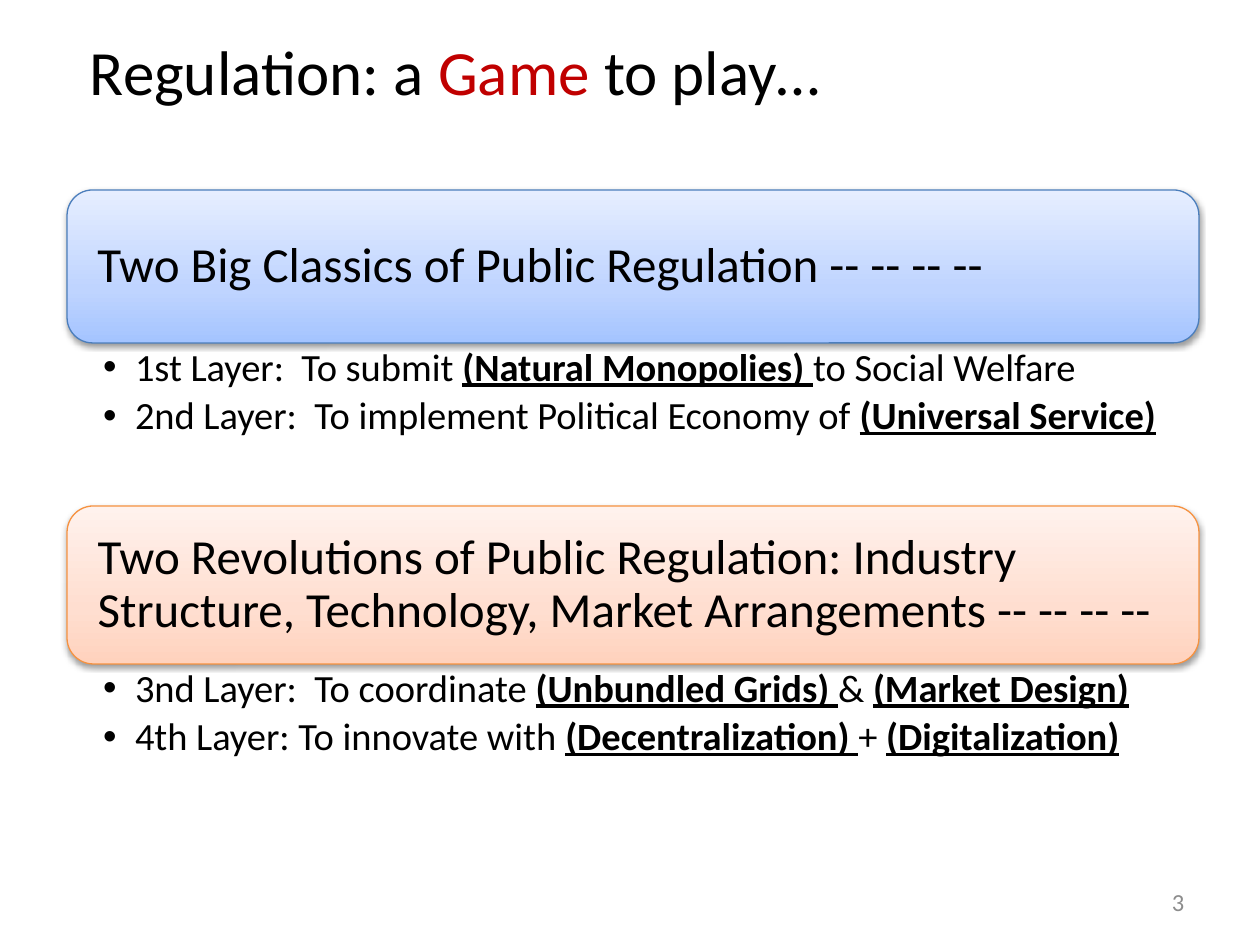
from pptx import Presentation
from pptx.dml.color import RGBColor
from pptx.enum.shapes import MSO_SHAPE as SHAPE
from pptx.enum.text import MSO_ANCHOR as ANCHOR, MSO_AUTO_SIZE as AUTO, PP_ALIGN as ALIGN
from pptx.oxml import parse_xml
from pptx.oxml.ns import nsdecls, qn
from pptx.util import Emu, Pt

PX = 914400 // 126

# Content: (text, emphasised) runs
TITLE = [(("Regulation: a "), False), ("Game", True), (" to play…", False)]
PAGE = "3"
SECTIONS = [
    dict(
        heading="Two Big Classics of Public Regulation -- -- -- --",
        style="blue", top=190, height=153, list_height=163,
        layers=[
            [("1st Layer:  To submit ", False), ("(Natural Monopolies) ", True),
             ("to Social Welfare", False)],
            [("2nd Layer:  To implement Political Economy of ", False),
             ("(Universal Service)", True)],
        ]),
    dict(
        heading="Two Revolutions of Public Regulation: Industry Structure, "
                "Technology, Market Arrangements -- -- -- --",
        style="orange", top=506, height=158, list_height=208,
        layers=[
            [("3nd Layer:  To coordinate ", False), ("(Unbundled Grids) ", True),
             ("& ", False), ("(Market Design)", True)],
            [("4th Layer: To innovate with ", False), ("(Decentralization) ", True),
             ("+ ", False), ("(Digitalization)", True)],
        ]),
]
LEFT, WIDTH = 67, 1132

THEME = dict(
    font="Calibri", text="000000", accent="C00000", page="8C8C8C",
    title_size=36, heading_size=28, list_size=22, page_size=14,
    blue=dict(line="4B7EBC", stops=[(0, "A4C4FF"), (35, "BFD4FF"), (100, "E6EEFF")]),
    orange=dict(line="F69240", stops=[(0, "FFD2BD"), (35, "FFDED0"), (100, "FFF2ED")]),
)


def px(n):
    return Emu(n * PX)


def place(sp, left, top, width, height):
    for name, n in dict(left=left, top=top, width=width, height=height).items():
        setattr(sp, name, px(n))


def set_frame(sp, anchor, left, top, right, bottom):
    tf = sp.text_frame
    values = dict(word_wrap=True, auto_size=AUTO.NONE, vertical_anchor=anchor,
                  margin_left=px(left), margin_top=px(top),
                  margin_right=px(right), margin_bottom=px(bottom))
    for name, value in values.items():
        setattr(tf, name, value)
    return tf


def add_run(p, text, size, color=THEME["text"], **formats):
    r = p.add_run()
    r.text = text
    for name, value in dict(name=THEME["font"], size=Pt(size), **formats).items():
        setattr(r.font, name, value)
    r.font.color.rgb = RGBColor.from_string(color)


def add_banner(slide, section):
    style = THEME[section["style"]]
    sp = slide.shapes.add_shape(SHAPE.ROUNDED_RECTANGLE, px(LEFT), px(section["top"]),
                                px(WIDTH), px(section["height"]))
    sp.line.color.rgb = RGBColor.from_string(style["line"])
    sp.line.width = Pt(0.75)
    sp.shadow.inherit = False

    # Three-stop gradient and soft drop shadow
    stops = "".join(f'<a:gs pos="{pos * 1000}"><a:srgbClr val="{color}"/></a:gs>'
                    for pos, color in style["stops"])
    sppr = sp._element.spPr
    sppr.find(qn("a:prstGeom")).addnext(parse_xml(
        f'<a:gradFill {nsdecls("a")} rotWithShape="1"><a:gsLst>{stops}</a:gsLst>'
        '<a:lin ang="16200000" scaled="0"/></a:gradFill>'))
    sppr.find(qn("a:effectLst")).append(parse_xml(
        f'<a:outerShdw {nsdecls("a")} blurRad="40000" dist="20000" dir="5400000" '
        'rotWithShape="0"><a:srgbClr val="000000"><a:alpha val="38000"/></a:srgbClr>'
        '</a:outerShdw>'))

    p = set_frame(sp, ANCHOR.MIDDLE, 23, 15, 23, 15).paragraphs[0]
    p.alignment, p.line_spacing = ALIGN.LEFT, 0.9
    add_run(p, section["heading"], THEME["heading_size"])


def fill_list(sp, section):
    place(sp, LEFT, section["top"] + section["height"], WIDTH, section["list_height"])
    tf = set_frame(sp, ANCHOR.TOP, 36, 5, 28, 5)
    for i, layer in enumerate(section["layers"]):
        p = tf.paragraphs[0] if i == 0 else tf.add_paragraph()
        ppr = p._p.get_or_add_pPr()
        ppr.set("marL", str(px(32)))
        ppr.set("indent", str(px(-32)))
        ppr.append(parse_xml(f'<a:buChar {nsdecls("a")} char="•"/>'))
        for name, value in dict(line_spacing=0.9, space_before=Pt(0),
                                space_after=Pt(4)).items():
            setattr(p, name, value)
        for text, strong in layer:
            add_run(p, text, THEME["list_size"], bold=strong, underline=strong)


def main():
    prs = Presentation()
    prs.slide_width, prs.slide_height = px(1260), px(945)
    slide = prs.slides.add_slide(prs.slide_layouts[3])  # title and two lists

    # Title
    title, *lists = slide.placeholders
    place(title, 63, 37, 1133, 149)
    p = set_frame(title, ANCHOR.TOP, 27, 6, 13, 6).paragraphs[0]
    p.alignment, p.line_spacing = ALIGN.LEFT, Pt(37)
    for text, accent in TITLE:
        add_run(p, text, THEME["title_size"], THEME["accent" if accent else "text"])

    # Banners, each with its list below
    for section, sp in zip(SECTIONS, lists):
        add_banner(slide, section)
        fill_list(sp, section)

    # Page number
    sp = slide.shapes.add_textbox(px(1159), px(877), px(79), px(50))
    p = set_frame(sp, ANCHOR.MIDDLE, 13, 6, 13, 6).paragraphs[0]
    add_run(p, PAGE, THEME["page_size"], THEME["page"])

    prs.save("out.pptx")


if __name__ == "__main__":
    main()
